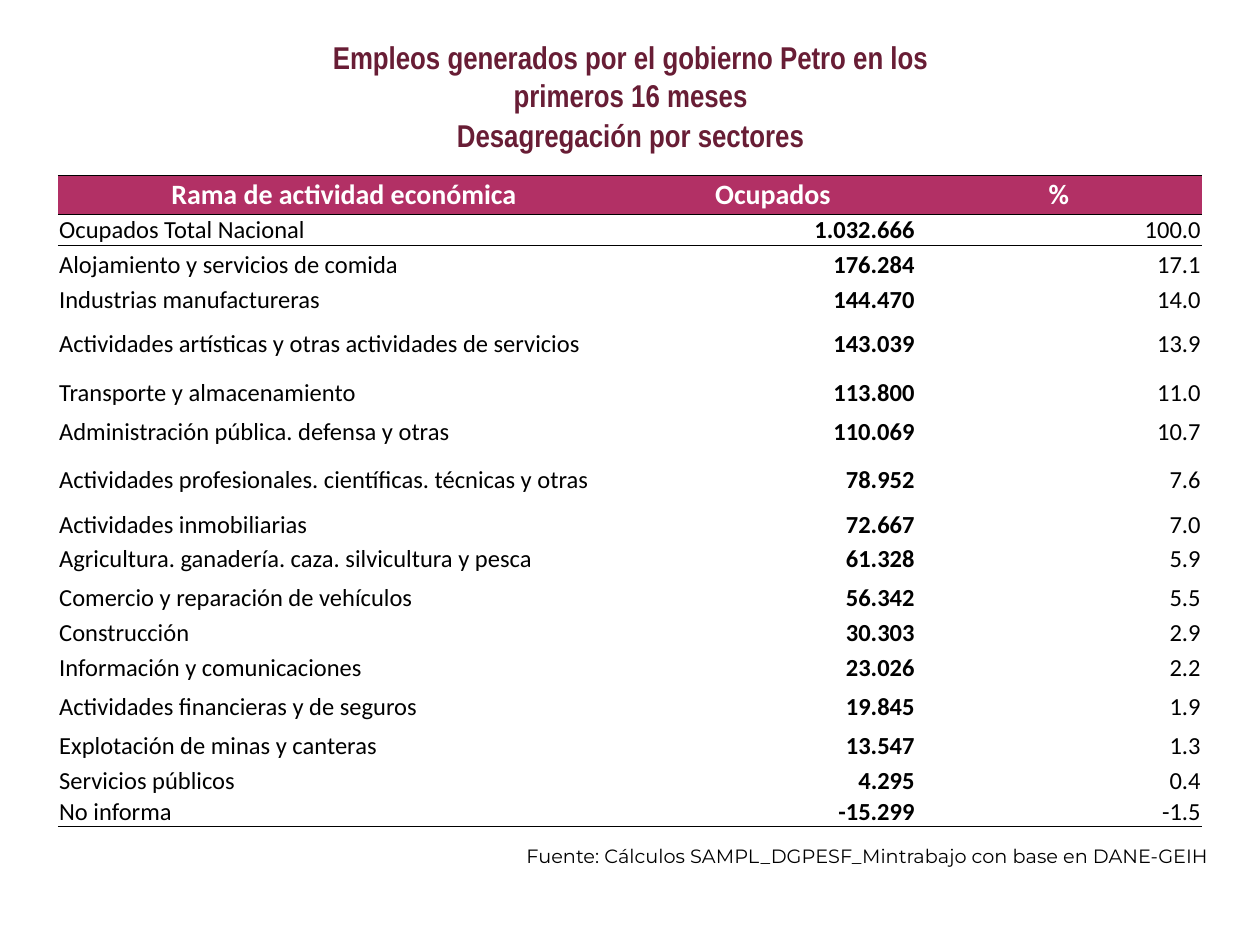
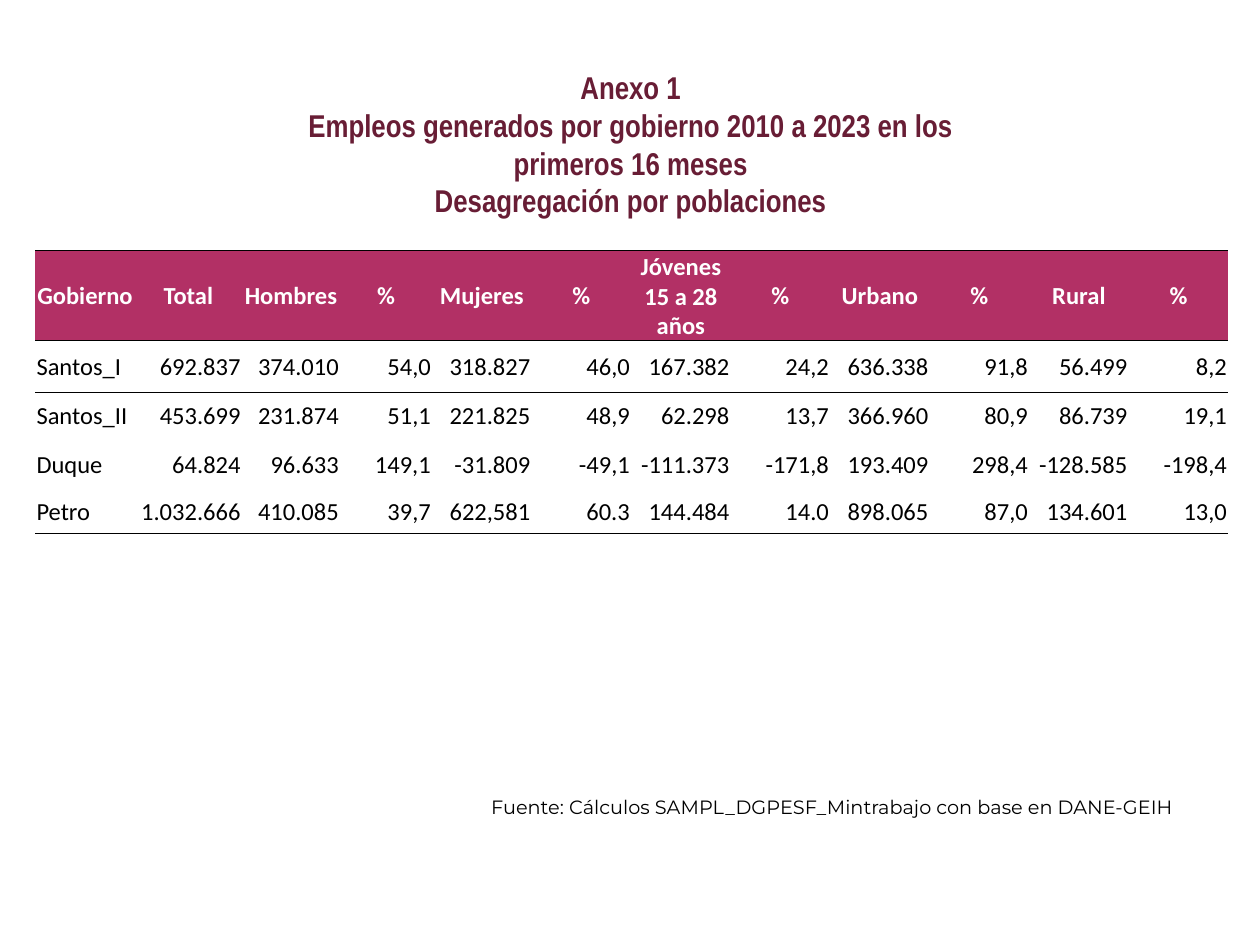
"""Build two slides on jobs created: by sector and by population group."""
from dataclasses import dataclass
from typing import Any

from lxml import etree
from pptx import Presentation
from pptx.dml.color import RGBColor
from pptx.enum.text import MSO_ANCHOR, MSO_AUTO_SIZE, PP_ALIGN
from pptx.oxml.ns import qn
from pptx.util import Inches, Pt

LEFT, MID, RIGHT = PP_ALIGN.LEFT, PP_ALIGN.CENTER, PP_ALIGN.RIGHT
TOP, CENTRE = MSO_ANCHOR.TOP, MSO_ANCHOR.MIDDLE
GROW = MSO_AUTO_SIZE.SHAPE_TO_FIT_TEXT

WINE = RGBColor(0x68, 0x1D, 0x35)
PINK = RGBColor(0xB2, 0x30, 0x65)
WHITE = RGBColor(0xFF, 0xFF, 0xFF)
BLACK = RGBColor(0x00, 0x00, 0x00)

TITLE = {"name": "Arial Narrow", "size": Pt(18), "bold": True}
NOTE = {"name": "Montserrat", "size": Pt(11), "bold": False}
BODY = {"name": "Calibri", "size": Pt(14), "bold": False}
INSET = {"margin_left": Inches(0.01), "margin_right": Inches(0.01),
         "margin_top": Inches(0.01), "margin_bottom": 0,
         "vertical_anchor": CENTRE}
PLAIN = "{2D5ABB26-0587-4C30-8999-92F81FD0307C}"
SOURCE = "Fuente: Cálculos SAMPL_DGPESF_Mintrabajo con base en DANE-GEIH"

LOW, STEP, TALL = 0.17, 0.31, 0.46
SECTORS = (
    ("Rama de actividad económica", "Ocupados", "%", STEP),
    ("Ocupados Total Nacional", "1.032.666", "100.0", LOW),
    ("Alojamiento y servicios de comida", "176.284", "17.1", STEP),
    ("Industrias manufactureras", "144.470", "14.0", LOW),
    ("Actividades artísticas y otras actividades de servicios",
     "143.039", "13.9", TALL),
    ("Transporte y almacenamiento", "113.800", "11.0", STEP),
    ("Administración pública. defensa y otras", "110.069", "10.7", STEP),
    ("Actividades profesionales. científicas. técnicas y otras",
     "78.952", "7.6", TALL),
    ("Actividades inmobiliarias", "72.667", "7.0", LOW),
    ("Agricultura. ganadería. caza. silvicultura y pesca",
     "61.328", "5.9", STEP),
    ("Comercio y reparación de vehículos", "56.342", "5.5", STEP),
    ("Construcción", "30.303", "2.9", LOW),
    ("Información y comunicaciones", "23.026", "2.2", STEP),
    ("Actividades financieras y de seguros", "19.845", "1.9", STEP),
    ("Explotación de minas y canteras", "13.547", "1.3", STEP),
    ("Servicios públicos", "4.295", "0.4", LOW),
    ("No informa", "-15.299", "-1.5", LOW),
)
GROUPS = (
    ("Gobierno", "Total", "Hombres", "%", "Mujeres", "%",
     "Jóvenes 15 a 28 años", "%", "Urbano", "%", "Rural", "%"),
    ("Santos_I", "692.837", "374.010", "54,0", "318.827", "46,0",
     "167.382", "24,2", "636.338", "91,8", "56.499", "8,2"),
    ("Santos_II", "453.699", "231.874", "51,1", "221.825", "48,9",
     "62.298", "13,7", "366.960", "80,9", "86.739", "19,1"),
    ("Duque", "64.824", "96.633", "149,1", "-31.809", "-49,1",
     "-111.373", "-171,8", "193.409", "298,4", "-128.585", "-198,4"),
    ("Petro", "1.032.666", "410.085", "39,7", "622,581", "60.3",
     "144.484", "14.0", "898.065", "87,0", "134.601", "13,0"),
)


@dataclass(frozen=True)
class Box:
    """A place on the slide, in inches."""
    left: float
    top: float
    width: float
    height: float

    def lengths(self) -> list[int]:
        """Return the four sides as lengths."""
        return [Inches(n) for n in (self.left, self.top, self.width, self.height)]


@dataclass(frozen=True)
class Grid:
    """The data and sizes of a table."""
    box: Box
    rows: list[tuple[str, ...]]
    widths: tuple[float, ...]
    heights: tuple[float, ...]
    head: int = 14
    strong: int = -1
    joined: int = 0


@dataclass(frozen=True)
class Page:
    """A titled table with its source line."""
    title: tuple[str, ...]
    place: Box
    grid: Grid
    note: Box
    last: dict[str, Any]


def apply(thing: Any, style: dict[str, Any]) -> None:
    """Set each format value on the thing."""
    for key, value in style.items():
        setattr(thing, key, value)


def write(para: Any, text: str, style: dict[str, Any], ink: RGBColor,
          align: PP_ALIGN) -> None:
    """Add a formatted run to a paragraph."""
    para.alignment = align
    run = para.add_run()
    run.text = text
    apply(run.font, style)
    run.font.color.rgb = ink


def edge(cell: Any, side: str) -> None:
    """Draw a thin black line on one side of a cell."""
    line = etree.SubElement(cell._tc.get_or_add_tcPr(), qn(f"a:{side}"), w=str(Pt(0.5)))
    fill = etree.SubElement(line, qn("a:solidFill"))
    etree.SubElement(fill, qn("a:srgbClr"), val=str(BLACK))


def fill_cell(cell: Any, text: str, row: int, col: int, grid: Grid) -> None:
    """Format one table cell and write its text."""
    apply(cell, INSET)
    if row < 2:
        edge(cell, "lnT")
    if row in (0, len(grid.rows) - 1):
        edge(cell, "lnB")
    para = cell.text_frame.paragraphs[0]
    if row == 0:
        cell.fill.solid()
        cell.fill.fore_color.rgb = PINK
        style, ink, align = BODY | {"size": Pt(grid.head), "bold": True}, WHITE, MID
    else:
        cell.fill.background()
        style, ink = BODY | {"bold": col == grid.strong}, BLACK
        align = RIGHT if col else LEFT
    if text:
        write(para, text, style, ink, align)
    else:
        para._p.get_or_add_endParaRPr().set("sz", "1400")


def draw_grid(slide: Any, grid: Grid) -> None:
    """Add the table."""
    frame = slide.shapes.add_table(len(grid.rows), len(grid.widths),
                                   *grid.box.lengths())
    table = frame.table
    table.first_row = table.horz_banding = False
    table._tbl.tblPr.find(qn("a:tableStyleId")).text = PLAIN
    for column, width in zip(table.columns, grid.widths):
        column.width = Inches(width)
    for row, height in zip(table.rows, grid.heights):
        row.height = Inches(height)
    frame.height = Inches(grid.box.height)
    for r, texts in enumerate(grid.rows):
        for c, text in enumerate(texts):
            fill_cell(table.cell(r, c), text, r, c, grid)
    for r in range(grid.joined):
        table.cell(r, 0).merge(table.cell(r, 1))


def draw_title(slide: Any, page: Page) -> None:
    """Place the title and write its lines."""
    shape = slide.shapes.title
    shape.left, shape.top, shape.width, shape.height = page.place.lengths()
    frame = shape.text_frame
    apply(frame, {"word_wrap": True, "auto_size": GROW, "vertical_anchor": TOP})
    for i, text in enumerate(page.title):
        para = frame.add_paragraph() if i else frame.paragraphs[0]
        write(para, text, TITLE, WINE, MID)
    apply(para, page.last)


def draw_note(slide: Any, box: Box) -> None:
    """Add the source line."""
    frame = slide.shapes.add_textbox(*box.lengths()).text_frame
    apply(frame, {"word_wrap": False, "auto_size": GROW})
    write(frame.paragraphs[0], SOURCE, NOTE, BLACK, LEFT)


PAGES = (
    Page(("Empleos generados por el gobierno Petro en los primeros 16 meses",
          "Desagregación por sectores"),
         Box(2.12, 0.25, 5.77, 1.01),
         Grid(Box(0.46, 1.39, 9.08, 5.18),
              [(name, "", count, share) for name, count, share, _ in SECTORS],
              (2.27,) * 4, tuple(row[-1] for row in SECTORS),
              head=16, strong=2, joined=len(SECTORS) - 1),
         Box(4.08, 6.65, 5.72, 0.29),
         {"line_spacing": 1.07, "space_after": Pt(8)}),
    Page(("Anexo 1",
          "Empleos generados por gobierno 2010 a 2023 en los primeros 16 meses",
          "Desagregación por poblaciones"),
         Box(2.12, 0.49, 5.77, 1.31),
         Grid(Box(0.28, 1.99, 9.43, 2.23), list(GROUPS),
              (0.79, 0.85, 0.78, 0.73) + (0.79,) * 8,
              (0.44, 0.41, 0.38, 0.39, 0.35)),
         Box(3.8, 6.26, 5.72, 0.29), {}),
)


def main() -> None:
    """Build and save the slides."""
    deck = Presentation()
    deck.slide_width, deck.slide_height = Inches(10), Inches(7.5)
    for page in PAGES:
        slide = deck.slides.add_slide(deck.slide_layouts[5])
        draw_title(slide, page)
        draw_note(slide, page.note)
        draw_grid(slide, page.grid)
    deck.save("out.pptx")


if __name__ == "__main__":
    main()
